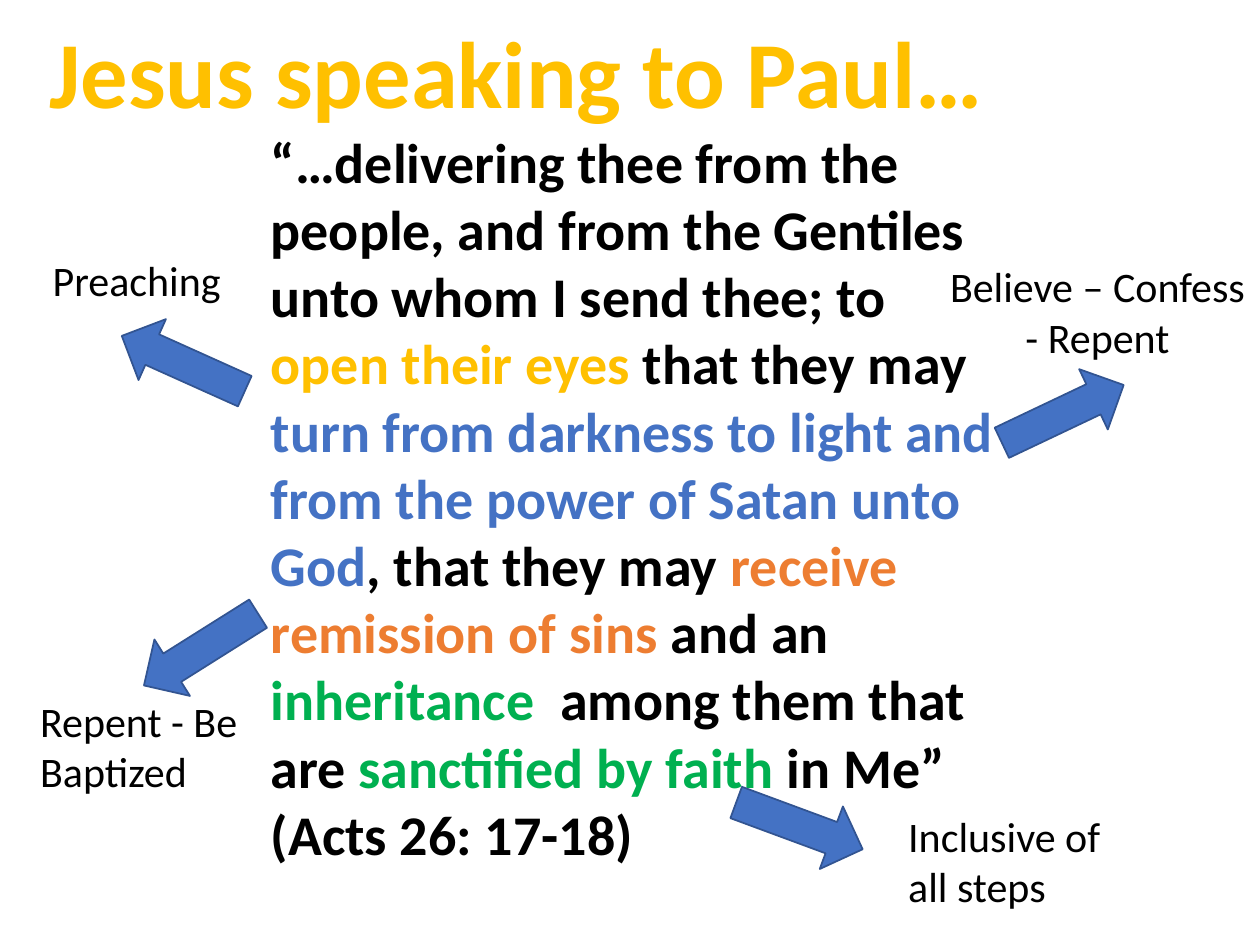
"""Build a slide that links phrases of Acts 26:17-18 to the steps they describe."""
from dataclasses import dataclass

from pptx import Presentation
from pptx.dml.color import RGBColor
from pptx.enum import shapes, text
from pptx.slide import Slide
from pptx.util import Inches, Pt

BLACK = RGBColor(0x00, 0x00, 0x00)
GOLD = RGBColor(0xFF, 0xC0, 0x00)
BLUE = RGBColor(0x44, 0x72, 0xC4)
DARK_BLUE = RGBColor(0x32, 0x54, 0x91)
ORANGE = RGBColor(0xED, 0x7D, 0x31)
GREEN = RGBColor(0x00, 0xB0, 0x50)

FONT = "Calibri"
ARROW_WIDTH, ARROW_HEIGHT = 1.07, 0.53


@dataclass
class Span:
    words: str
    color: RGBColor = BLACK


@dataclass
class Caption:
    spans: list[Span]
    left: float
    top: float
    width: float
    height: float
    size: int = 24
    bold: bool = False
    centered: bool = False
    wrap: bool = True


@dataclass
class Arrow:
    left: float
    top: float
    rotation: float


VERSE = [
    Span("“…delivering thee from the people, and from the Gentiles unto whom I send thee; to "),
    Span("open their eyes ", GOLD),
    Span("that they may "),
    Span("turn from darkness to light and from the power of Satan unto God", BLUE),
    Span(", that they may "),
    Span("receive remission of sins ", ORANGE),
    Span("and an "),
    Span("inheritance ", GREEN),
    Span(" among them that are "),
    Span("sanctified by faith ", GREEN),
    Span("in Me” (Acts 26: 17-18)"),
]

CAPTIONS = [
    Caption(VERSE, 2.05, 0.96, 6.12, 6.02, size=32, bold=True),
    Caption([Span("Jesus speaking to Paul…", GOLD)], 0.22, 0.06, 7.76, 1.01,
            size=54, bold=True, centered=True, wrap=False),
    Caption([Span("Preaching")], 0.32, 1.97, 1.84, 0.5),
    Caption([Span("Believe – Confess - Repent")], 7.42, 2.02, 2.58, 0.91, centered=True),
    Caption([Span("Repent - Be Baptized")], 0.22, 5.47, 2.28, 0.91),
    Caption([Span("Inclusive of all steps")], 7.11, 6.38, 1.97, 0.91),
]

ARROWS = [
    Arrow(0.92, 2.62, 204.2),
    Arrow(7.9, 3.02, 334.6),
    Arrow(1.06, 4.89, 147.8),
    Arrow(5.81, 6.29, 20.3),
]


def add_caption(slide: Slide, caption: Caption) -> None:
    box = slide.shapes.add_textbox(Inches(caption.left), Inches(caption.top),
                                   Inches(caption.width), Inches(caption.height))
    frame = box.text_frame
    frame.word_wrap = caption.wrap
    frame.auto_size = text.MSO_AUTO_SIZE.SHAPE_TO_FIT_TEXT
    para = frame.paragraphs[0]
    para.alignment = text.PP_ALIGN.CENTER if caption.centered else text.PP_ALIGN.LEFT
    para.font.name = FONT
    para.font.size = Pt(caption.size)
    para.font.bold = caption.bold
    for span in caption.spans:
        run = para.add_run()
        run.text = span.words
        run.font.color.rgb = span.color


def add_arrow(slide: Slide, arrow: Arrow) -> None:
    shape = slide.shapes.add_shape(shapes.MSO_SHAPE.RIGHT_ARROW, Inches(arrow.left),
                                   Inches(arrow.top), Inches(ARROW_WIDTH), Inches(ARROW_HEIGHT))
    shape.rotation = arrow.rotation
    shape.shadow.inherit = False
    shape.fill.solid()
    shape.fill.fore_color.rgb = BLUE
    shape.line.color.rgb = DARK_BLUE
    shape.line.width = Pt(1)


def main() -> None:
    deck = Presentation()
    deck.slide_width, deck.slide_height = Inches(10), Inches(7.5)
    slide = deck.slides.add_slide(deck.slide_layouts[6])
    for caption in CAPTIONS:
        add_caption(slide, caption)
    for arrow in ARROWS:
        add_arrow(slide, arrow)
    deck.save("out.pptx")


if __name__ == "__main__":
    main()
